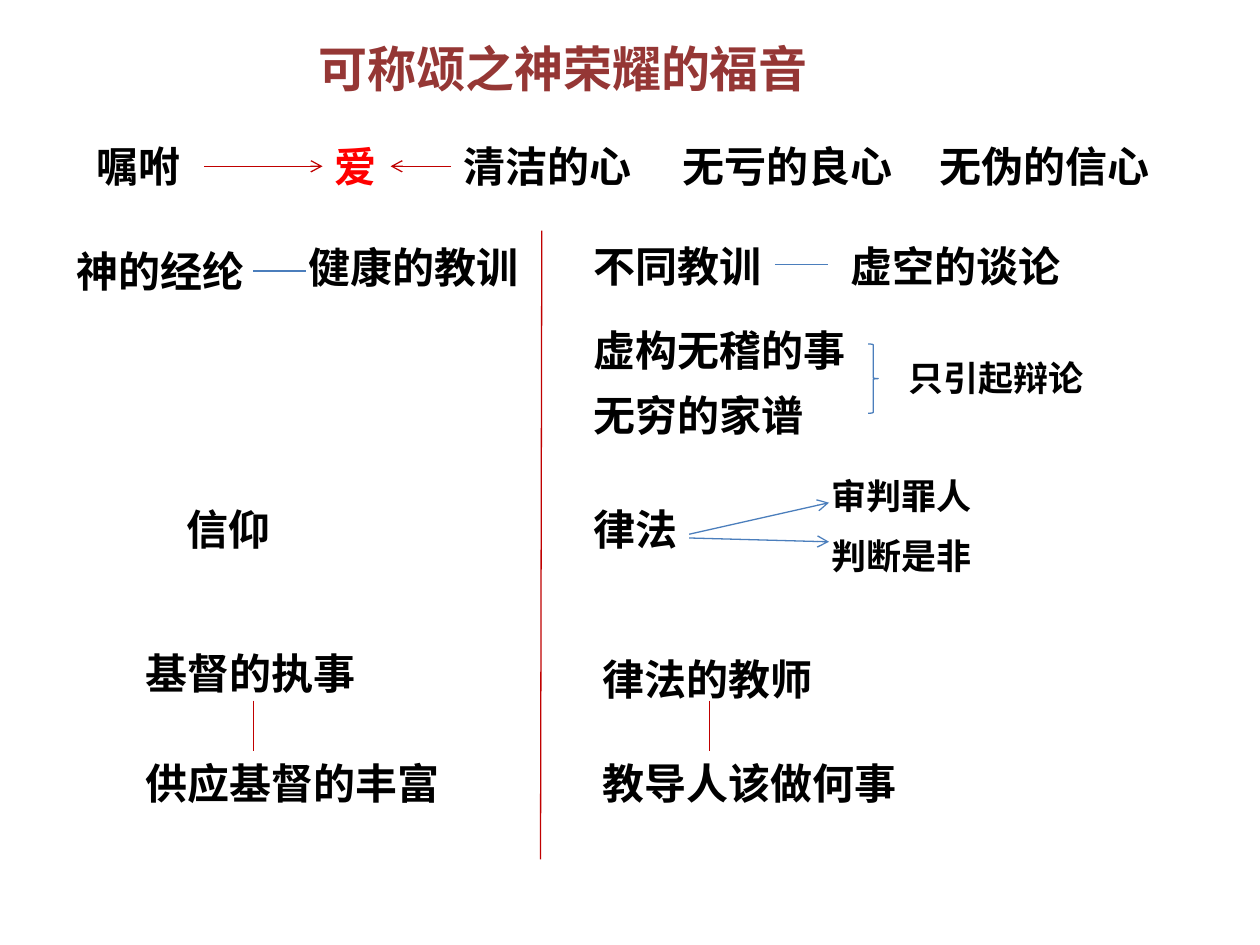
import pptx
import pptx.dml.color
import pptx.enum.shapes
import pptx.enum.text
import pptx.oxml.ns
import pptx.util
from lxml import etree

Inches = pptx.util.Inches
BLACK, RED, DARK_RED, MAROON, BLUE = "000000", "FF0000", "C00000", "953735", "4B7EBC"
CJK_FONT = "Noto Sans CJK SC"


def color(value):
    """Turn a hex string into a colour."""
    return pptx.dml.color.RGBColor.from_string(value)


def add_text(slide, left, top, text, size=24, font="Calibri", fill=BLACK):
    """Add a bold one-line label whose box follows its character count."""
    width = len(text) * size / 72 + 0.2
    height = size * 1.2 / 72 + 0.1
    shape = slide.shapes.add_textbox(Inches(left), Inches(top), Inches(width), Inches(height))
    frame = shape.text_frame
    frame.word_wrap = False
    frame.auto_size = pptx.enum.text.MSO_AUTO_SIZE.SHAPE_TO_FIT_TEXT
    run = frame.paragraphs[0].add_run()
    run.text = text
    run.font.name = font
    run.font.size = pptx.util.Pt(size)
    run.font.bold = True
    run.font.color.rgb = color(fill)
    return shape


def add_line(slide, start, end, stroke=BLUE, arrow=False):
    """Add a thin straight line, with an open arrowhead at its end if wanted."""
    connector = slide.shapes.add_connector(
        pptx.enum.shapes.MSO_CONNECTOR.STRAIGHT, *(Inches(value) for value in (*start, *end)))
    connector.line.color.rgb = color(stroke)
    connector.line.width = pptx.util.Pt(0.75)
    qn = pptx.oxml.ns.qn
    properties = connector._element.spPr
    if arrow:
        etree.SubElement(properties.find(qn("a:ln")), qn("a:tailEnd"), type="arrow")
    etree.SubElement(properties, qn("a:effectLst"))
    return connector


def add_brace(slide, left, top, width, height):
    """Add a right brace that groups the lines beside it."""
    brace = slide.shapes.add_shape(
        pptx.enum.shapes.MSO_SHAPE.RIGHT_BRACE,
        Inches(left), Inches(top), Inches(width), Inches(height))
    brace.shadow.inherit = False
    brace.fill.background()
    brace.line.color.rgb = color(BLUE)
    brace.line.width = pptx.util.Pt(0.75)
    return brace


def add_header(slide, left, top):
    """Place the title and the row on the charge and love."""
    add_text(slide, left + 1.76, top, "可称颂之神荣耀的福音", size=28, font=CJK_FONT, fill=MAROON)
    row = top + 0.81
    for offset, text in ((0, "嘱咐"), (2.91, "清洁的心"), (4.65, "无亏的良心"), (6.69, "无伪的信心")):
        add_text(slide, left + offset, row, text)
    add_text(slide, left + 1.89, row, "爱", font=CJK_FONT, fill=RED)
    middle = row + 0.25
    add_line(slide, (left + 0.95, middle), (left + 1.89, middle), DARK_RED, arrow=True)
    add_line(slide, (left + 2.91, middle), (left + 2.43, middle), DARK_RED, arrow=True)


def add_ministry(slide, left, top, upper, lower, upper_top):
    """Place a role above its work, joined by a vertical line."""
    add_text(slide, left, upper_top, upper)
    add_text(slide, left, top + 0.87, lower)
    add_line(slide, (left + 0.95, top + 0.47), (left + 0.95, top + 0.87), DARK_RED)


def add_healthy_teaching(slide, left, top):
    """Place the left column, on God's economy."""
    add_text(slide, left, top + 0.04, "神的经纶")
    add_line(slide, (left + 1.5, top + 0.29), (left + 1.92, top + 0.29))
    add_text(slide, left + 1.84, top + 0.01, "健康的教训")
    add_text(slide, left + 0.87, top + 2.09, "信仰")
    add_ministry(slide, left + 0.55, top + 3.23, "基督的执事", "供应基督的丰富", top + 3.23)


def add_different_teaching(slide, left, top):
    """Place the right column, on different teachings and the law."""
    for offset, text in ((0, "不同教训"), (0.67, "虚构无稽的事"), (1.18, "无穷的家谱"), (2.09, "律法")):
        add_text(slide, left, top + offset, text)
    add_line(slide, (left + 1.54, top + 0.24), (left + 1.96, top + 0.24))
    add_text(slide, left + 2.04, top, "虚空的谈论")
    add_brace(slide, left + 2.28, top + 0.87, 0.08, 0.55)
    add_text(slide, left + 2.5, top + 0.92, "只引起辩论", size=20)
    for text, text_top, start, end in (("审判罪人", 1.86, 2.38, 2.13), ("判断是非", 2.33, 2.41, 2.44)):
        add_text(slide, left + 1.89, top + text_top, text, size=20)
        add_line(slide, (left + 0.86, top + start), (left + 1.97, top + end), arrow=True)
    add_ministry(slide, left + 0.07, top + 3.23, "律法的教师", "教导人该做何事", top + 3.28)


def main():
    """Build and save the slide."""
    presentation = pptx.Presentation()
    presentation.slide_width = Inches(10)
    presentation.slide_height = Inches(7.5)
    slide = presentation.slides.add_slide(presentation.slide_layouts[6])
    add_header(slide, 0.67, 0.26)
    add_healthy_teaching(slide, 0.51, 1.86)
    add_different_teaching(slide, 4.61, 1.86)
    add_line(slide, (4.3, 1.83), (4.29, 6.82), DARK_RED)
    presentation.save("out.pptx")


if __name__ == "__main__":
    main()
